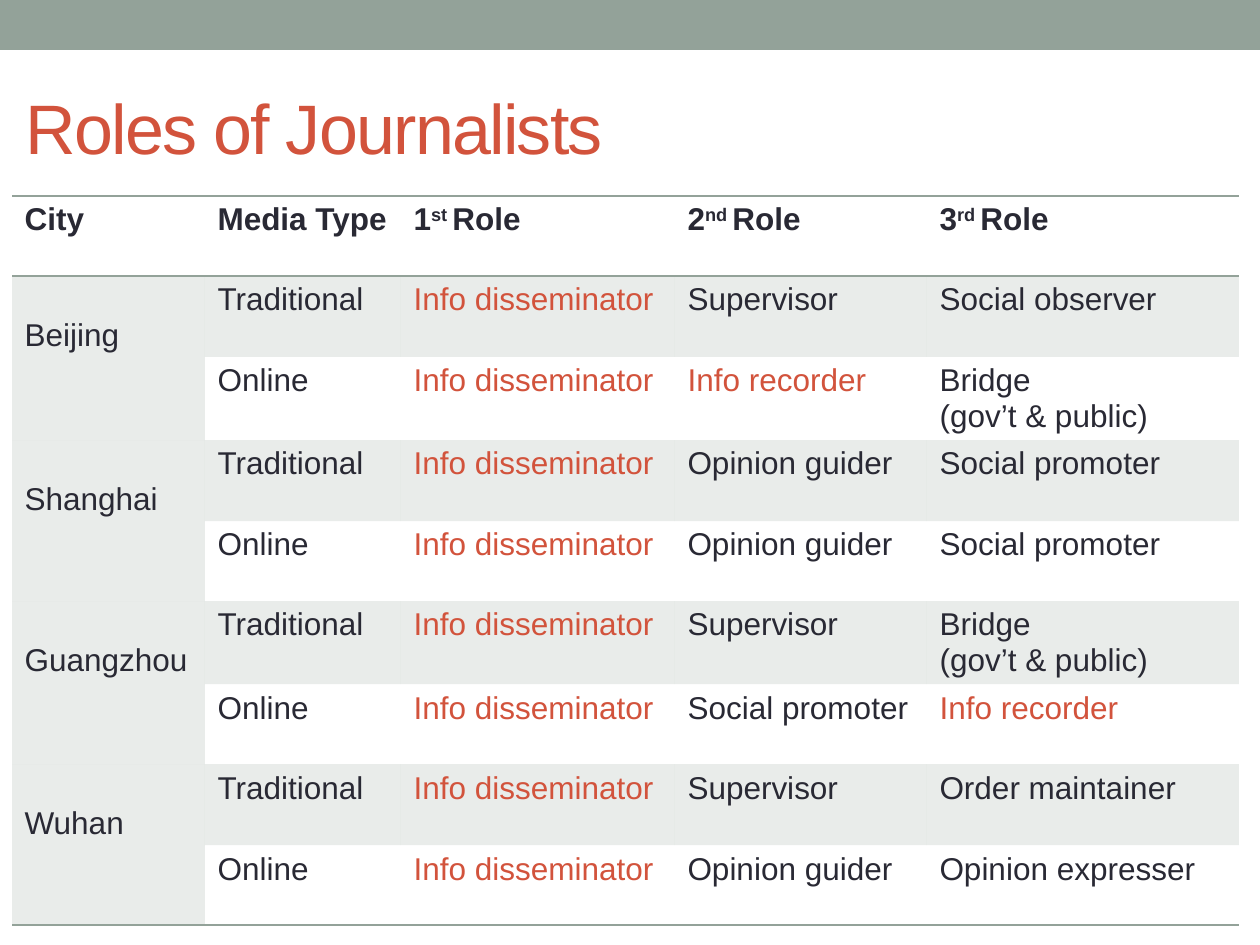
"""Build the slide that compares the roles of journalists in four cities."""
from dataclasses import dataclass

from lxml import etree
from pptx import Presentation
from pptx import util as u
from pptx.dml.color import RGBColor
from pptx.enum import shapes, text
from pptx.oxml.ns import qn


@dataclass(frozen=True)
class Theme:
    font: str = "Arial"
    ink: str = "292934"
    accent: str = "D2533C"
    sage: str = "93A299"
    band_alpha: int = 20
    title_size: int = 40
    body_size: int = 18


THEME = Theme()
SCALE = 914400 / 126
COLUMNS = [193, 196, 274, 252, 312]
CITIES = ["Beijing", "Shanghai", "Guangzhou", "Wuhan"]
HEADER = [
    [("City", False)],
    [("Media Type", False)],
    [("1", False), ("st ", True), ("Role", False)],
    [("2", False), ("nd ", True), ("Role", False)],
    [("3", False), ("rd ", True), ("Role", False)],
]
FIRST_ROLE = "Info disseminator"
BRIDGE = "Bridge\n(gov’t & public)"
LATER_ROLES = [
    ("Supervisor", "Social observer"),
    ("Info recorder", BRIDGE),
    ("Opinion guider", "Social promoter"),
    ("Opinion guider", "Social promoter"),
    ("Supervisor", BRIDGE),
    ("Social promoter", "Info recorder"),
    ("Supervisor", "Order maintainer"),
    ("Opinion guider", "Opinion expresser"),
]


def px(count):
    return u.Emu(round(count * SCALE))


def add_run(para, words, size, color, bold=False, raised=False):
    span = para.add_run()
    span.text = words
    span.font.name = THEME.font
    span.font.size = u.Pt(size)
    span.font.bold = bold
    span.font.color.rgb = RGBColor.from_string(color)
    if raised:
        span.font._element.set("baseline", "30000")
    return span


def add_bar(page):
    bar = page.shapes.add_shape(shapes.MSO_SHAPE.RECTANGLE, 0, 0, px(1260), px(50))
    bar.shadow.inherit = False
    bar.fill.solid()
    bar.fill.fore_color.rgb = RGBColor.from_string(THEME.sage)
    bar.line.fill.background()


def set_title(page, words):
    title = page.shapes.title
    title.left, title.top, title.width, title.height = map(px, (13, 59, 1134, 136))
    title.text_frame.word_wrap = True
    title.text_frame.vertical_anchor = text.MSO_ANCHOR.MIDDLE
    para = title.text_frame.paragraphs[0]
    para.alignment = text.PP_ALIGN.LEFT
    span = add_run(para, words, THEME.title_size, THEME.accent)
    span.font._element.set("spc", "-100")


def shade(cell, banded):
    if not banded:
        cell.fill.background()
        return
    cell.fill.solid()
    cell.fill.fore_color.rgb = RGBColor.from_string(THEME.sage)
    color = cell._tc.tcPr.find(".//" + qn("a:srgbClr"))
    etree.SubElement(color, qn("a:alpha"), val=str(THEME.band_alpha * 1000))


def rule(cell, sides):
    props = cell._tc.get_or_add_tcPr()
    for place, side in enumerate(sides):
        line = etree.Element(qn(f"a:ln{side}"), w=str(u.Pt(1)))
        fill = etree.SubElement(line, qn("a:solidFill"))
        etree.SubElement(fill, qn("a:srgbClr"), val=THEME.sage)
        props.insert(place, line)


def write(cell, words):
    color = THEME.accent if words.startswith("Info") else THEME.ink
    for index, line in enumerate(words.split("\n")):
        frame = cell.text_frame
        para = frame.add_paragraph() if index else frame.paragraphs[0]
        add_run(para, line, THEME.body_size, color)


def add_grid(page):
    row_count = len(LATER_ROLES) + 1
    frame = page.shapes.add_table(
        row_count, len(COLUMNS), px(12), px(196), px(sum(COLUMNS)), px(725))
    table = frame.table
    table.first_row = table.horz_banding = False
    style = table._tbl.tblPr.find(qn("a:tableStyleId"))
    style.text = "{2D5ABB26-0587-4C30-8999-92F81FD0307C}"
    for column, width in zip(table.columns, COLUMNS):
        column.width = px(width)
    for index, row in enumerate(table.rows):
        row.height = px(80 + index % 2)
        for place, cell in enumerate(row.cells):
            shade(cell, index and (place == 0 or index % 2))
            if index == 0:
                rule(cell, "TB")
            elif index == row_count - 1:
                rule(cell, "B")
    return table


def fill_grid(table):
    for place, spans in enumerate(HEADER):
        para = table.cell(0, place).text_frame.paragraphs[0]
        for words, raised in spans:
            add_run(para, words, THEME.body_size, THEME.ink, True, raised)
    for index, city in enumerate(CITIES):
        cell = table.cell(2 * index + 1, 0)
        cell.merge(table.cell(2 * index + 2, 0))
        cell.margin_top = px(42)
        write(cell, city)
    rule(table.cell(2 * len(CITIES) - 1, 0), "B")
    for index, roles in enumerate(LATER_ROLES):
        media = "Online" if index % 2 else "Traditional"
        for place, words in enumerate((media, FIRST_ROLE, *roles), start=1):
            write(table.cell(index + 1, place), words)


def main():
    deck = Presentation()
    deck.slide_width, deck.slide_height = px(1260), px(945)
    page = deck.slides.add_slide(deck.slide_layouts[5])
    add_bar(page)
    set_title(page, "Roles of Journalists")
    fill_grid(add_grid(page))
    deck.save("out.pptx")


if __name__ == "__main__":
    main()
